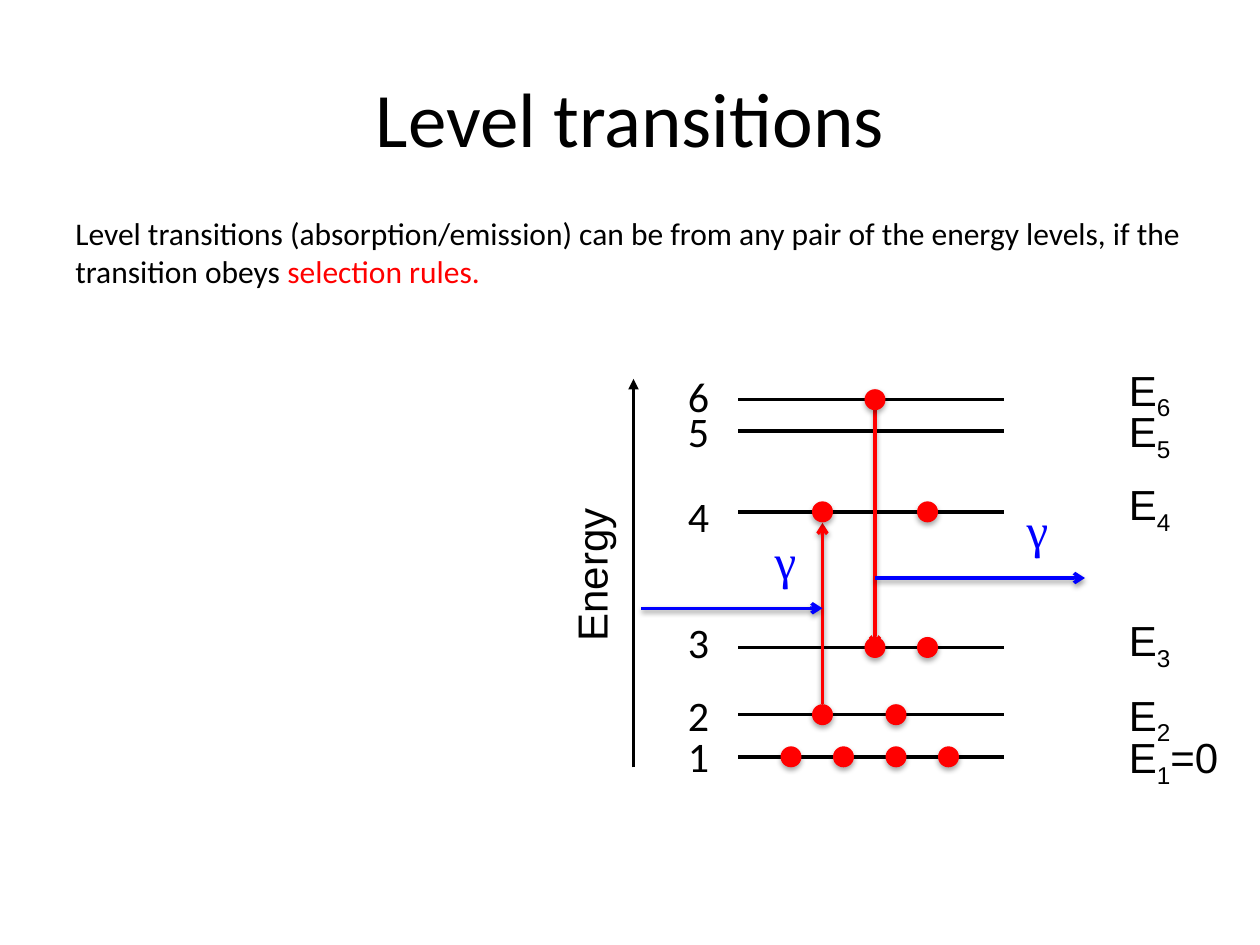
from lxml import etree
from pptx import Presentation
from pptx import util as u
from pptx.dml.color import RGBColor
from pptx.enum import shapes, text
from pptx.oxml.ns import qn

COLOURS = {"black": "000000", "red": "FF0000", "blue": "0000FF"}


class Diagram:
    """Holds the style and the slide being drawn."""

    line_width = 2
    dot_size = 12
    shadow_blur, shadow_angle = 3.1, 90

    def __init__(self, slide):
        self.slide = slide

    def colour(self, name):
        return RGBColor.from_string(COLOURS[name])

    def shadow(self, effects, opacity, distance):
        outer = etree.SubElement(
            effects, qn("a:outerShdw"), blurRad=str(int(u.Pt(self.shadow_blur))),
            dist=str(int(u.Pt(distance))), dir=str(self.shadow_angle * 60000), rotWithShape="0")
        colour = etree.SubElement(outer, qn("a:srgbClr"), val=COLOURS["black"])
        etree.SubElement(colour, qn("a:alpha"), val=str(opacity * 1000))

    def text(self, box, runs, font="Calibri", size=24, wrap=False, rotation=0,
             align=text.PP_ALIGN.LEFT, anchor=text.MSO_ANCHOR.TOP, fit=True):
        """Runs are (wording, colour, baseline percent)."""
        shape = self.slide.shapes.add_textbox(*map(u.Pt, box))
        shape.rotation = rotation
        frame = shape.text_frame
        resize = text.MSO_AUTO_SIZE.SHAPE_TO_FIT_TEXT if fit else text.MSO_AUTO_SIZE.NONE
        for name, value in {"word_wrap": wrap, "vertical_anchor": anchor,
                            "auto_size": resize}.items():
            setattr(frame, name, value)
        paragraph = frame.paragraphs[0]
        paragraph.alignment = align
        for wording, colour, baseline in runs:
            run = paragraph.add_run()
            run.text = wording
            for name, value in {"name": font, "size": u.Pt(size)}.items():
                setattr(run.font, name, value)
            run.font.color.rgb = self.colour(colour)
            if baseline:
                run.font._element.set("baseline", str(baseline * 1000))

    def line(self, start, end, colour="black", head=None, shadow=False):
        connector = self.slide.shapes.add_connector(
            shapes.MSO_CONNECTOR.STRAIGHT, *map(u.Pt, start + end))
        connector.line.color.rgb = self.colour(colour)
        connector.line.width = u.Pt(self.line_width)
        properties = connector._element.spPr
        if head:
            etree.SubElement(properties.find(qn("a:ln")), qn("a:tailEnd"), type=head)
        effects = etree.SubElement(properties, qn("a:effectLst"))
        if shadow:
            self.shadow(effects, 38, 1.6)

    def dot(self, x, y):
        radius = self.dot_size / 2
        shape = self.slide.shapes.add_shape(
            shapes.MSO_SHAPE.OVAL, u.Pt(x - radius), u.Pt(y - radius),
            u.Pt(self.dot_size), u.Pt(self.dot_size))
        shape.fill.solid()
        shape.fill.fore_color.rgb = self.colour("red")
        shape.line.fill.background()
        shape.shadow.inherit = False
        self.shadow(shape._element.spPr.find(qn("a:effectLst")), 35, 1.8)


# Level: line height, top of number, top of energy label, dot centres
LEVELS = {
    6: (228.4, 208, 204.5, [500]),
    5: (246.4, 228.3, 228.3, []),
    4: (292.5, 276.5, 270, [470, 530]),
    3: (370, 348.5, 347.8, [500, 530]),
    2: (408.4, 390.3, 390.3, [470, 512]),
    1: (432.5, 414, 414.7, [452, 482, 512, 542]),
}
LEFT, RIGHT = 422, 574


def main():
    presentation = Presentation()
    presentation.slide_width, presentation.slide_height = u.Pt(720), u.Pt(540)
    diagram = Diagram(presentation.slides.add_slide(presentation.slide_layouts[6]))

    # Title and statement
    diagram.text((36, 21.6, 648, 90), [("Level transitions", "black", 0)], size=44, wrap=True,
                 align=text.PP_ALIGN.CENTER, anchor=text.MSO_ANCHOR.MIDDLE, fit=False)
    diagram.text((36, 118.8, 648, 51), [
        ("Level transitions (absorption/emission) can be from any pair of the energy levels, "
         "if the transition obeys ", "black", 0),
        ("selection rules.", "red", 0)], size=18, wrap=True)

    # Energy axis
    diagram.line((362, 438.5), (362, 216.5), head="triangle")
    diagram.text((292.3, 309.6, 91.4, 36.7), [("Energy", "black", 0)], font="Arial", rotation=270)

    # Levels with their numbers and energies
    for level, (height, number_top, energy_top, _) in LEVELS.items():
        diagram.line((LEFT, height), (RIGHT, height))
        diagram.text((386, number_top, 28, 36.7), [(str(level), "black", 0)])
        energy = [("E", "black", 0), (str(level), "black", -25)]
        if level == 1:
            energy.append(("=0", "black", 0))
        diagram.text((638, energy_top, 67.7 if level == 1 else 39.6, 36.7), energy, font="Arial")

    # Transitions: emission down, absorption up
    diagram.line((500, 234.5), (500, 370), "red", "arrow", True)
    diagram.line((470, 402.5), (470, 298.8), "red", "arrow", True)

    # Electrons
    for height, _, _, centres in LEVELS.values():
        for centre in centres:
            diagram.dot(centre, height)

    # Photons
    for start, end, height, label_box in [
            (500, 620, 330.3, (579.6, 282.2, 22.3, 41)),
            (366.5, 470, 347.6, (435.6, 299.5, 19.5, 41))]:
        diagram.line((start, height), (end, height), "blue", "arrow", True)
        diagram.text(label_box, [("γ", "blue", 0)], font="Times New Roman", size=28, wrap=True)

    presentation.save("out.pptx")


if __name__ == "__main__":
    main()
